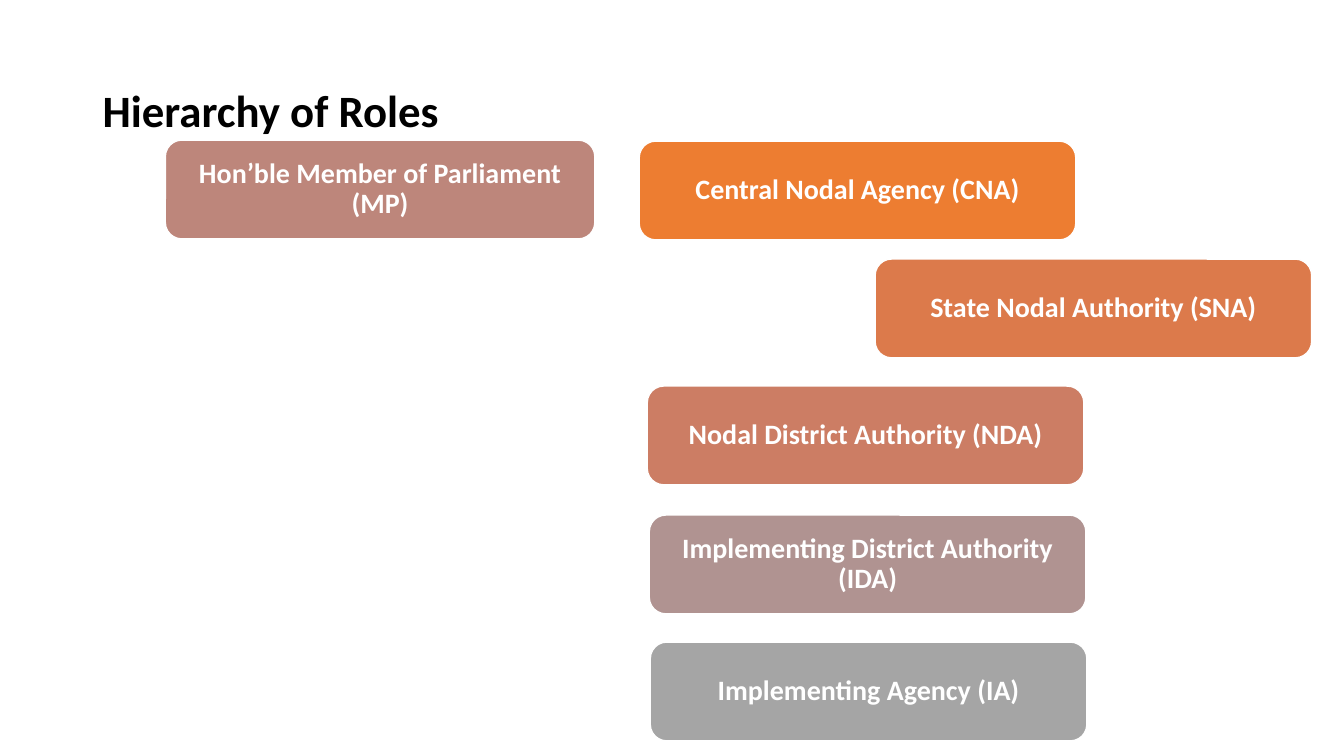
from dataclasses import dataclass

from pptx import Presentation
from pptx.dml.color import RGBColor
from pptx.enum.shapes import MSO_SHAPE
from pptx.enum.text import MSO_ANCHOR, PP_ALIGN
from pptx.util import Inches, Pt

ROUNDED = MSO_SHAPE.ROUNDED_RECTANGLE
MIDDLE = MSO_ANCHOR.MIDDLE
LEFT, CENTER = PP_ALIGN.LEFT, PP_ALIGN.CENTER


@dataclass(frozen=True)
class Theme:
    font: str = "Calibri"
    title_size: int = 32
    role_size: int = 20
    title_color: str = "000000"
    white: str = "FFFFFF"
    member: str = "BD867B"
    central: str = "ED7D31"
    state: str = "DC7A4B"
    nodal_district: str = "CC7D64"
    implementing_district: str = "B09391"
    agency: str = "A5A5A5"


THEME = Theme()


def write_text(shape, text, *, size, color, align, inset_x, inset_y):
    frame = shape.text_frame
    frame.word_wrap = True
    frame.vertical_anchor = MIDDLE
    frame.margin_left = frame.margin_right = Inches(inset_x)
    frame.margin_top = frame.margin_bottom = Inches(inset_y)
    paragraph = frame.paragraphs[0]
    paragraph.alignment = align
    paragraph.line_spacing = 0.9
    run = paragraph.add_run()
    run.text = text
    run.font.name = THEME.font
    run.font.size = Pt(size)
    run.font.bold = True
    run.font.color.rgb = RGBColor.from_string(color)


presentation = Presentation()
presentation.slide_width = Inches(13.33)
presentation.slide_height = Inches(7.5)
slide = presentation.slides.add_slide(presentation.slide_layouts[6])

title = slide.shapes.add_textbox(Inches(0.92), Inches(0.4), Inches(11.5), Inches(1.45))
write_text(title, "Hierarchy of Roles", size=THEME.title_size,
           color=THEME.title_color, align=LEFT, inset_x=0.1, inset_y=0.05)

ROLE_WIDTH, MEMBER_WIDTH, ROLE_HEIGHT = 4.33, 4.26, 0.98

# Each role: text, left, top, width, fill
roles = [
    ("Hon’ble Member of Parliament (MP)", 1.64, 1.39, MEMBER_WIDTH, THEME.member),
    ("Central Nodal Agency (CNA)", 6.34, 1.4, ROLE_WIDTH, THEME.central),
    ("State Nodal Authority (SNA)", 8.68, 2.57, ROLE_WIDTH, THEME.state),
    ("Nodal District Authority (NDA)", 6.42, 3.83, ROLE_WIDTH, THEME.nodal_district),
    ("Implementing District Authority (IDA)", 6.44, 5.11, ROLE_WIDTH,
     THEME.implementing_district),
    ("Implementing Agency (IA)", 6.45, 6.37, ROLE_WIDTH, THEME.agency),
]

for text, left, top, width, fill in roles:
    role = slide.shapes.add_shape(
        ROUNDED, Inches(left), Inches(top), Inches(width), Inches(ROLE_HEIGHT))
    role.shadow.inherit = False
    role.fill.solid()
    role.fill.fore_color.rgb = RGBColor.from_string(fill)
    role.line.color.rgb = RGBColor.from_string(THEME.white)
    role.line.width = Pt(1)
    write_text(role, text, size=THEME.role_size, color=THEME.white,
               align=CENTER, inset_x=0.08, inset_y=0.04)

presentation.save("out.pptx")
